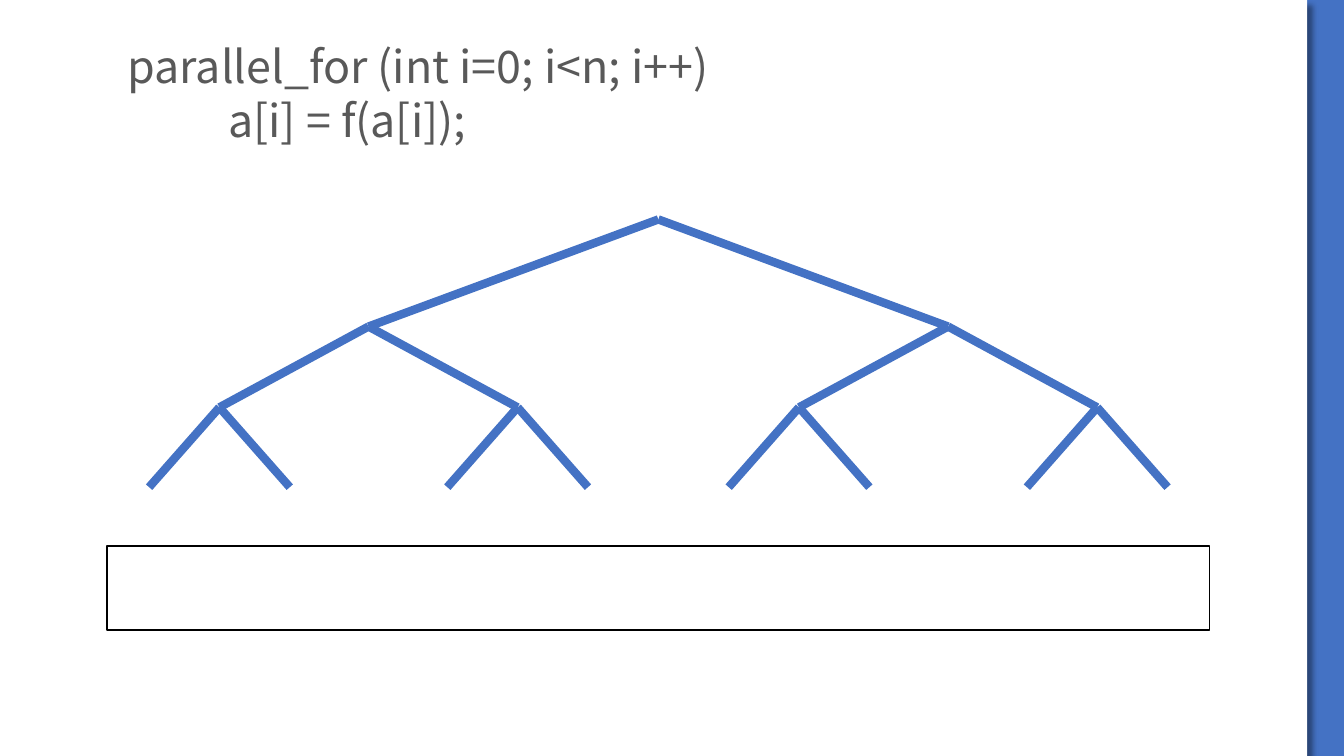
from lxml import etree
from pptx import Presentation
from pptx import util as u
from pptx.dml.color import RGBColor
from pptx.enum import shapes, text
from pptx.oxml import parse_xml
from pptx.oxml.ns import nsdecls, qn

PX = 9525
BLUE = RGBColor(0x44, 0x72, 0xC4)
WHITE = RGBColor(0xFF, 0xFF, 0xFF)
BLACK = RGBColor(0x00, 0x00, 0x00)
GREY = RGBColor(0x59, 0x59, 0x59)


class Painter:
    font_name = "Noto Sans CJK SC"
    font_size = u.Pt(32)
    tab_width = 96
    branch_width = u.Pt(6)

    def __init__(self, page):
        self.page = page

    def background(self, color):
        fill = self.page.background.fill
        fill.solid()
        fill.fore_color.rgb = color

    def rectangle(self, left, top, width, height, fill, line=None):
        box = self.page.shapes.add_shape(
            shapes.MSO_SHAPE.RECTANGLE,
            left * PX, top * PX, width * PX, height * PX)
        box.shadow.inherit = False
        box.fill.solid()
        box.fill.fore_color.rgb = fill
        if line is None:
            box.line.fill.background()
        else:
            box.line.color.rgb = line
            box.line.width = u.Pt(1)
        return box

    def drop_shadow(self, box):
        effects = box._element.spPr.find(qn("a:effectLst"))
        effects.append(parse_xml(
            f'<a:outerShdw {nsdecls("a")} blurRad="{u.Pt(4)}" '
            f'dist="{u.Pt(6)}" dir="2700000" algn="tl" rotWithShape="0">'
            '<a:srgbClr val="000000"><a:alpha val="40000"/></a:srgbClr>'
            '</a:outerShdw>'))

    def code(self, left, top, width, height, lines):
        box = self.page.shapes.add_textbox(
            left * PX, top * PX, width * PX, height * PX)
        frame = box.text_frame
        frame.word_wrap = True
        frame.auto_size = text.MSO_AUTO_SIZE.SHAPE_TO_FIT_TEXT
        frame.text = "\n".join(lines)
        for para in frame.paragraphs:
            para.font.name = self.font_name
            para.font.size = self.font_size
            para.font.color.rgb = GREY
            # One tab stop, one tab width in from the text edge
            stops = etree.Element(qn("a:tabLst"))
            etree.SubElement(stops, qn("a:tab"),
                             pos=str(self.tab_width * PX), algn="l")
            para._p.pPr.insert(0, stops)

    def branch(self, x1, y1, x2, y2):
        line = self.page.shapes.add_connector(
            shapes.MSO_CONNECTOR.STRAIGHT, x1 * PX, y1 * PX, x2 * PX, y2 * PX)
        line.line.color.rgb = BLUE
        line.line.width = self.branch_width
        etree.SubElement(line._element.spPr, qn("a:effectLst"))

    def tree(self, x, y, levels):
        """Draw two branches from a node, then the subtree under each."""
        if not levels:
            return
        (spread, drop), *lower = levels
        for child_x in (x - spread, x + spread):
            self.branch(x, y, child_x, y + drop)
            self.tree(child_x, y + drop, lower)


def main():
    deck = Presentation()
    deck.slide_width, deck.slide_height = 1280 * PX, 720 * PX
    page = deck.slides.add_slide(deck.slide_layouts[6])
    painter = Painter(page)

    # White panel over the blue edge
    painter.background(BLUE)
    panel = painter.rectangle(0, 0, 1245, 720, WHITE)
    painter.drop_shadow(panel)

    # Parallel loop
    painter.code(112, 32, 1008, 113,
                 ["parallel_for (int i=0; i<n; i++)", "\ta[i] = f(a[i]);"])

    # Array
    painter.rectangle(102, 520, 1050, 80, WHITE, BLACK)

    # Fork tree: spread and drop of each level
    painter.tree(627, 209, [(276, 102), (142, 77), (67, 76)])

    deck.save("out.pptx")


if __name__ == "__main__":
    main()
